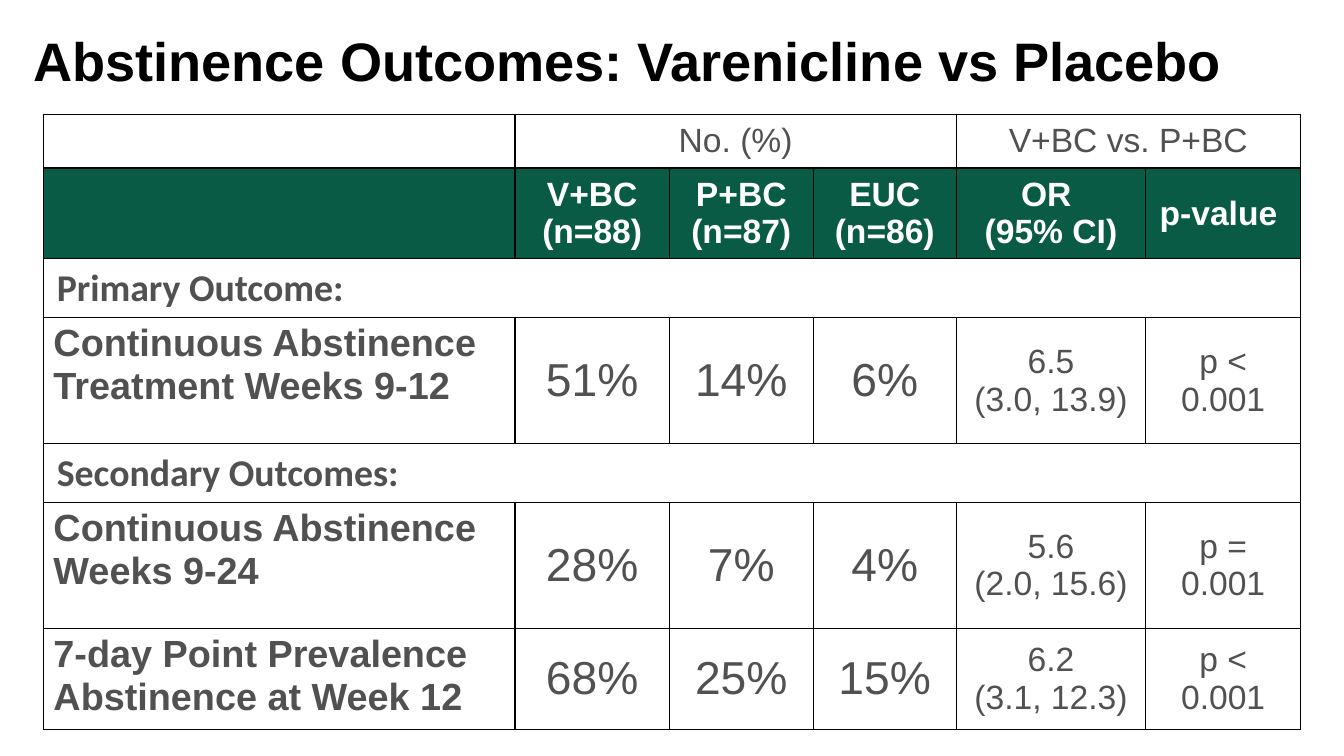
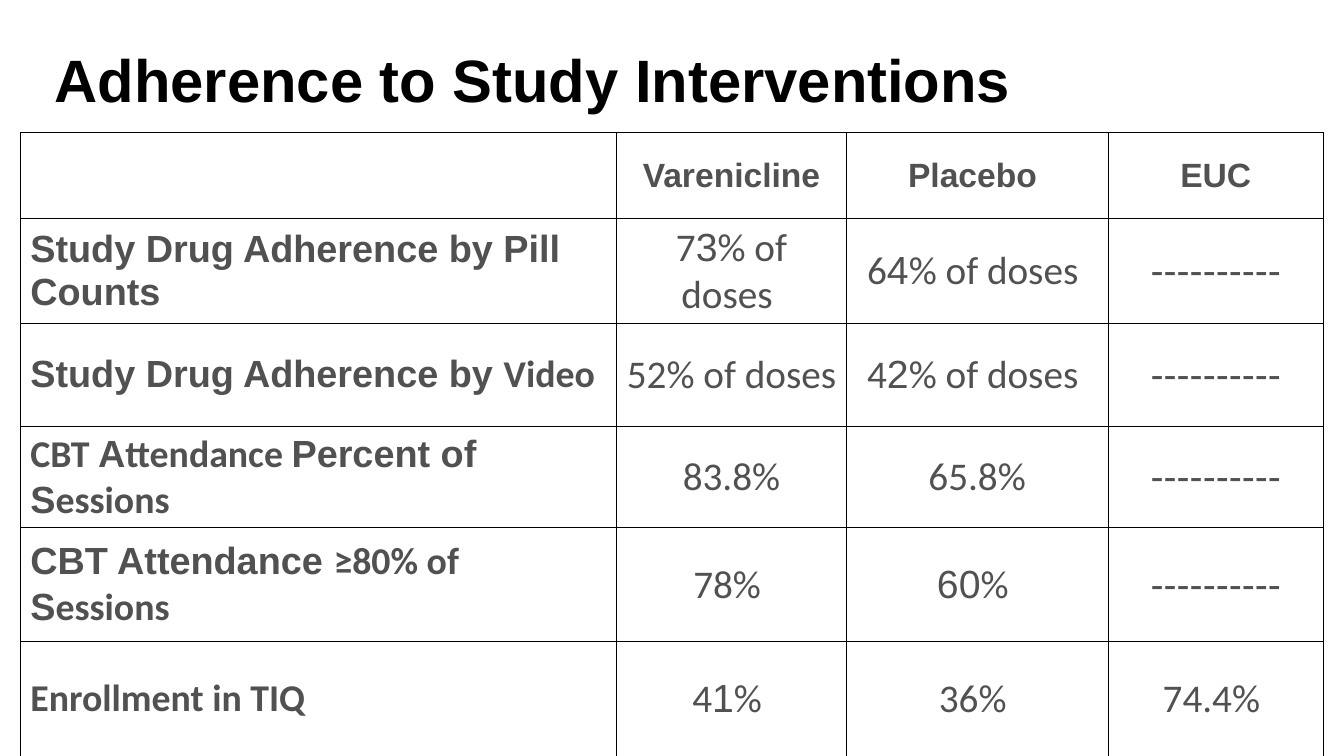
from lxml import etree
from pptx import Presentation
from pptx.dml.color import RGBColor
from pptx.enum.text import MSO_ANCHOR as Anchor, PP_ALIGN as Align
from pptx.oxml.ns import qn
from pptx.util import Pt

BLACK, WHITE, GREY, GREEN = "000000", "FFFFFF", "515151", "0A5B45"
FONTS = ("Arial", "Calibri")
THIN, HEAVY = 0.75, 1.5
NARROW, WIDE = (7.2, 3.6), (9.6, 4.8)  # side and top/bottom cell margins

# Cell styles
BASE = dict(size=24, bold=False, color=GREY, align=Align.CENTER,
            anchor=Anchor.MIDDLE, inset=NARROW, fill=None)
GROUP = BASE | dict(inset=WIDE)
HEAD = BASE | dict(bold=True)
BAND = HEAD | dict(color=WHITE, fill=GREEN)
LABEL = HEAD | dict(size=27, align=Align.LEFT)
TOP_LABEL = LABEL | dict(anchor=Anchor.TOP)
SECTION = TOP_LABEL | dict(inset=WIDE)
PERCENT = BASE | dict(size=33)
VALUE = BASE | dict(size=28)


def rgb(color):
    return RGBColor.from_string(color)


def write(tf, text, size, bold, color, align=Align.LEFT):
    """Each line is a paragraph; each | switches between the two fonts."""
    for i, line in enumerate(text.split("\n")):
        p = tf.add_paragraph() if i else tf.paragraphs[0]
        p.alignment = align
        for k, part in enumerate(line.split("|")):
            if not part:
                continue
            r = p.add_run()
            r.text = part
            for name, value in dict(name=FONTS[k % 2], size=Pt(size), bold=bold).items():
                setattr(r.font, name, value)
            r.font.color.rgb = rgb(color)


def add_title(s, text, left, top, width, height, size):
    tf = s.shapes.add_textbox(*map(Pt, (left, top, width, height))).text_frame
    tf.word_wrap = True
    for side in ("left", "top", "right", "bottom"):
        setattr(tf, f"margin_{side}", 0)
    write(tf, text, size, True, BLACK)


def set_borders(cell, widths):
    tc_pr = cell._tc.get_or_add_tcPr()
    for i, (side, width) in enumerate(zip("LRTB", widths)):
        ln = etree.Element(qn(f"a:ln{side}"), w=str(Pt(width)))
        fill = etree.SubElement(ln, qn("a:solidFill"))
        etree.SubElement(fill, qn("a:srgbClr"), val=BLACK)
        tc_pr.insert(i, ln)


def fill_cell(cell, text, style):
    side, edge = style["inset"]
    for name, value in dict(margin_left=Pt(side), margin_right=Pt(side),
                            margin_top=Pt(edge), margin_bottom=Pt(edge),
                            vertical_anchor=style["anchor"]).items():
        setattr(cell, name, value)
    if style["fill"]:
        cell.fill.solid()
        cell.fill.fore_color.rgb = rgb(style["fill"])
    else:
        cell.fill.background()
    write(cell.text_frame, text,
          *(style[key] for key in ("size", "bold", "color", "align")))


def add_grid(s, left, top, cols, rows, cells, merges=(), heavy=False):
    """cells holds rows of (text, style); heavy marks off first row and column."""
    frame = s.shapes.add_table(len(rows), len(cols),
                               *map(Pt, (left, top, sum(cols), sum(rows))))
    table = frame.table
    table.first_row = table.horz_banding = False
    for col, width in zip(table.columns, cols):
        col.width = Pt(width)
    for row, height in zip(table.rows, rows):
        row.height = Pt(height)
    for row, first, last in merges:
        table.cell(row, first).merge(table.cell(row, last))
    for i, row in enumerate(cells):
        for j, (text, style) in enumerate(row):
            cell = table.cell(i, j)
            fill_cell(cell, text, style)
            merged = cell.is_merge_origin or cell.is_spanned
            strong = (j == 1 and (not merged or cell.is_merge_origin),
                      j == 0 and not merged, i == 1, i == 0)
            set_borders(cell, [HEAVY if heavy and on else THIN for on in strong])


def styled(texts, styles):
    return list(zip(texts, styles))


def outcomes_slide(s):
    add_title(s, "Abstinence Outcomes: Varenicline vs Placebo", 24, 19.5, 897, 46.5, 38.7)
    section = [SECTION] * 6
    result = [TOP_LABEL] + [PERCENT] * 3 + [BASE] * 2
    cells = [
        styled(["", "No. (%)", "", "", "V+BC vs. P+BC", ""], [GROUP] * 6),
        styled(["", "V+BC (n=88)", "P+BC (n=87)", "EUC (n=86)",
                "OR \n(95% CI)", "p-value "], [BAND] * 6),
        styled(["|Primary Outcome:"] + [""] * 5, section),
        styled(["Continuous Abstinence\nTreatment Weeks 9-12", "51%", "14%", "6%",
                "6.5\n(3.0, 13.9)", "p < 0.001"], result),
        styled(["|Secondary Outcomes:"] + [""] * 5, section),
        styled(["Continuous Abstinence\nWeeks 9-24", "28%", "7%", "4%",
                "5.6\n(2.0, 15.6)", "p = 0.001"], result),
        styled(["7-day Point Prevalence Abstinence at Week 12", "68%", "25%", "15%",
                "6.2\n(3.1, 12.3)", "p < 0.001"], result),
    ]
    add_grid(s, 31, 81.5, [337, 110, 103, 102, 135.5, 110.5],
             [38.5, 64.5, 42, 90, 42, 90, 72], cells,
             merges=[(0, 1, 3), (0, 4, 5), (2, 0, 5), (4, 0, 5)], heavy=True)


def adherence_slide(s):
    add_title(s, "Adherence to Study Interventions", 39, 30.5, 921, 51.5, 42.7)
    none = "-" * 10
    texts = [
        ["Study Drug Adherence by Pill Counts", "|7|3|% of doses ", "|6|4|% of doses ", none],
        ["Study Drug Adherence by |Video", "|52% of doses ", "|4|2|% of doses ", none],
        ["|CBT |A|ttendance |Percent of S|essions", "|83.8%", "|65.8%", none],
        ["CBT Attendance |≥80% of |S|essions", "|78% ", "60|% ", none],
        ["|Enrollment in TIQ", "|4|1|% ", "|36% ", "|74.4% "],
    ]
    cells = [styled(["", "Varenicline", "Placebo ", "EUC"], [HEAD] * 4)]
    cells += [styled(row, [LABEL] + [VALUE] * 3) for row in texts]
    add_grid(s, 14.5, 94.75, [426, 164, 187, 154],
             [61.5, 74.25, 74.25, 72, 81.5, 81.5], cells)


def main():
    prs = Presentation()
    prs.slide_width, prs.slide_height = Pt(960), Pt(540)
    for build in (outcomes_slide, adherence_slide):
        build(prs.slides.add_slide(prs.slide_layouts[6]))
    prs.save("out.pptx")


if __name__ == "__main__":
    main()
